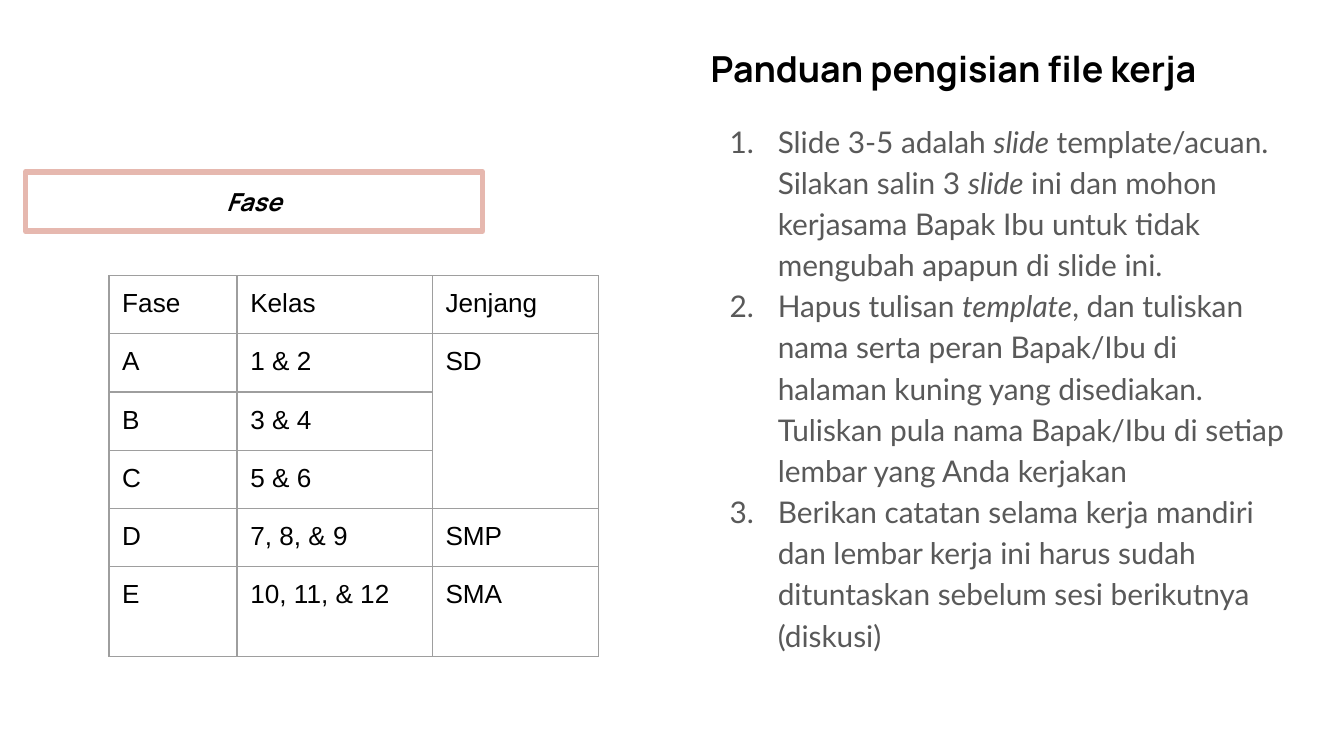
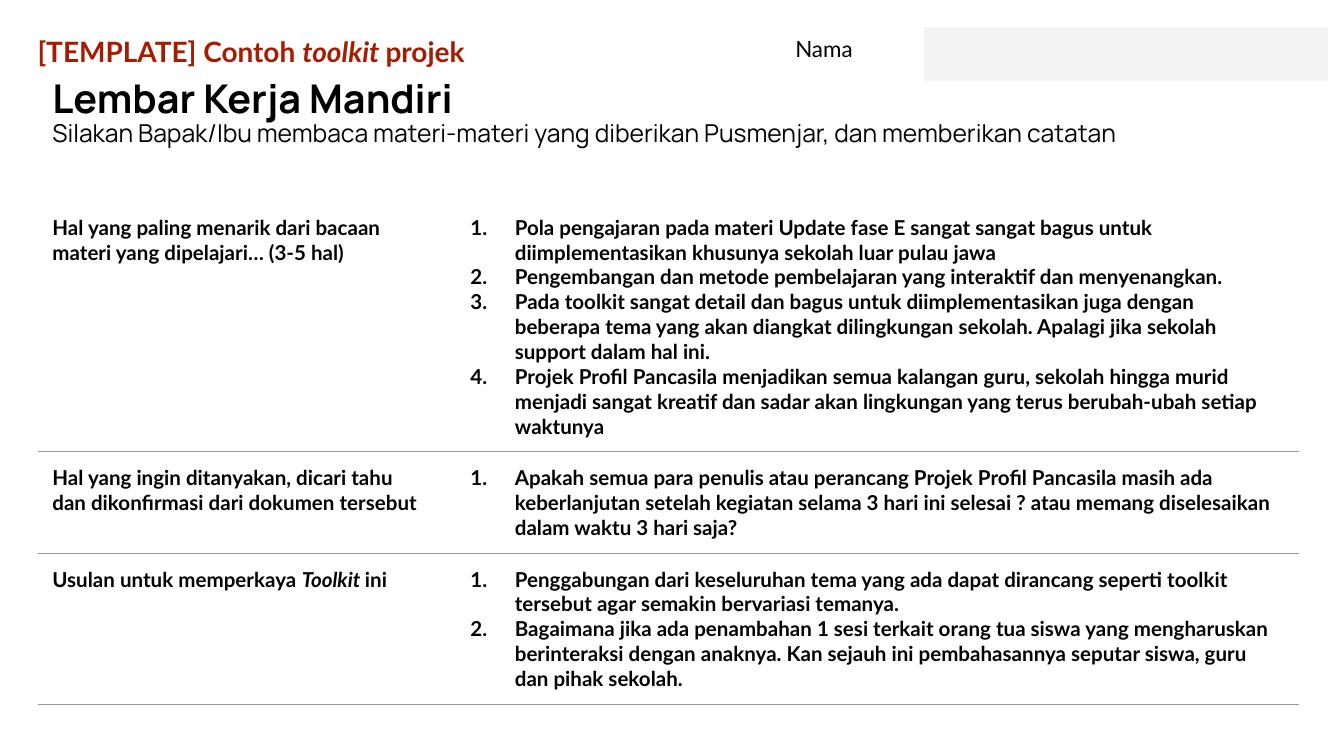
import pptx
import pptx.util
import pptx.dml.color
import pptx.enum.shapes
import pptx.enum.text
import pptx.oxml
import pptx.oxml.ns
from lxml import etree

Cm, Pt = pptx.util.Cm, pptx.util.Pt
RGBColor = pptx.dml.color.RGBColor
ALIGN = pptx.enum.text.PP_ALIGN
ANCHOR = pptx.enum.text.MSO_ANCHOR

# Shared look
BLACK = RGBColor(0x00, 0x00, 0x00)
WHITE = RGBColor(0xFF, 0xFF, 0xFF)
GRAY_TEXT = RGBColor(0x59, 0x59, 0x59)
GRID_LINE = RGBColor(0x9E, 0x9E, 0x9E)
RULE_LINE = RGBColor(0x99, 0x99, 0x99)
FIELD_FILL = RGBColor(0xF3, 0xF3, 0xF3)
PINK = RGBColor(0xE6, 0xB8, 0xAF)
RED = RGBColor(0xA6, 0x1C, 0x00)
HEAD_FONT, TEXT_FONT, GRID_FONT = "Manrope", "Lato", "Arial"
INSET = 0.25

# Content; text between asterisks is italic
GUIDE = [
    "Slide 3-5 adalah *slide* template/acuan. Silakan salin 3 *slide* ini dan mohon "
    "kerjasama Bapak Ibu untuk tidak mengubah apapun di slide ini.",
    "Hapus tulisan *template*, dan tuliskan nama serta peran Bapak/Ibu di halaman kuning "
    "yang disediakan. Tuliskan pula nama Bapak/Ibu di setiap lembar yang Anda kerjakan",
    "Berikan catatan selama kerja mandiri dan lembar kerja ini harus sudah dituntaskan "
    "sebelum sesi berikutnya (diskusi)",
]
PHASES = [
    ("Fase", "Kelas", "Jenjang"),
    ("A", "1 & 2", "SD"),
    ("B", "3 & 4", ""),
    ("C", "5 & 6", ""),
    ("D", "7, 8, & 9", "SMP"),
    ("E", "10, 11, & 12", "SMA"),
]
WORKSHEET = [
    ("Hal yang paling menarik dari bacaan materi yang dipelajari… (3-5 hal)", [
        "Pola pengajaran pada materi Update fase E sangat sangat bagus untuk "
        "diimplementasikan khusunya sekolah luar pulau jawa",
        "Pengembangan dan metode pembelajaran yang interaktif dan menyenangkan.",
        "Pada toolkit sangat detail dan bagus untuk diimplementasikan juga dengan beberapa "
        "tema yang akan diangkat dilingkungan sekolah. Apalagi jika sekolah support dalam "
        "hal ini.",
        "Projek Profil Pancasila menjadikan semua kalangan guru, sekolah hingga murid "
        "menjadi sangat kreatif dan sadar akan lingkungan yang terus berubah-ubah setiap "
        "waktunya",
    ]),
    ("Hal yang ingin ditanyakan, dicari tahu dan dikonfirmasi dari dokumen tersebut", [
        "Apakah semua para penulis atau perancang Projek Profil Pancasila masih ada "
        "keberlanjutan setelah kegiatan selama 3 hari ini selesai ? atau memang "
        "diselesaikan dalam waktu 3 hari saja?",
    ]),
    ("Usulan untuk memperkaya *Toolkit *ini", [
        "Penggabungan dari keseluruhan tema yang ada dapat dirancang seperti toolkit "
        "tersebut agar semakin bervariasi temanya.",
        "Bagaimana jika ada penambahan 1 sesi terkait orang tua siswa yang mengharuskan "
        "berinteraksi dengan anaknya. Kan sejauh ini pembahasannya seputar siswa, guru dan "
        "pihak sekolah.",
    ]),
]


def box(*lengths):
    return [Cm(length) for length in lengths]


def write(paragraph, text, size, font=TEXT_FONT, color=BLACK, bold=False, align=ALIGN.LEFT,
          spacing=1.0):
    """Fill a paragraph run by run, with italics between asterisks."""
    paragraph.alignment = align
    paragraph.line_spacing = spacing
    paragraph.space_before = paragraph.space_after = Pt(0)
    for i, part in enumerate(text.split("*")):
        if part:
            run = paragraph.add_run()
            run.text = part
            run.font.name, run.font.size = font, Pt(size)
            run.font.bold, run.font.italic = bold, i % 2 == 1
            run.font.color.rgb = color


def number(paragraph, hanging, color):
    """Give a paragraph an automatic number with a hanging indent."""
    props = paragraph._p.get_or_add_pPr()
    props.set("marL", str(Cm(1.27)))
    props.set("indent", str(-Cm(hanging)))
    props.append(solid_element("a:buClr", color))
    etree.SubElement(props, pptx.oxml.ns.qn("a:buFont"), typeface=TEXT_FONT)
    etree.SubElement(props, pptx.oxml.ns.qn("a:buAutoNum"), type="arabicPeriod")


def solid_element(tag, color):
    element = etree.Element(pptx.oxml.ns.qn(tag))
    etree.SubElement(element, pptx.oxml.ns.qn("a:srgbClr"), val=str(color))
    return element


def write_list(frame, items, size, hanging, color=BLACK, **style):
    for i, item in enumerate(items):
        paragraph = frame.add_paragraph() if i else frame.paragraphs[0]
        write(paragraph, item, size, color=color, **style)
        number(paragraph, hanging, color)


def set_frame(shape, anchor=ANCHOR.TOP):
    frame = shape.text_frame
    frame.word_wrap = True
    frame.auto_size = pptx.enum.text.MSO_AUTO_SIZE.NONE
    frame.vertical_anchor = anchor
    frame.margin_left = frame.margin_right = Cm(INSET)
    frame.margin_top = frame.margin_bottom = Cm(INSET)
    return frame


def place(placeholder, position, anchor=ANCHOR.TOP):
    """Move a template placeholder and return its text frame."""
    (placeholder.left, placeholder.top,
     placeholder.width, placeholder.height) = box(*position)
    return set_frame(placeholder, anchor)


def add_plain_table(slide, left, top, widths, heights):
    """Add a table without banding or fills."""
    table = slide.shapes.add_table(
        len(heights), len(widths), *box(left, top, sum(widths), sum(heights))).table
    table.first_row = table.horz_banding = False
    for column, width in zip(table.columns, widths):
        column.width = Cm(width)
    for row, height in zip(table.rows, heights):
        row.height = Cm(height)
    for cell in table.iter_cells():
        cell.fill.background()
        cell.margin_left = cell.margin_right = Cm(INSET)
        cell.margin_top = cell.margin_bottom = Cm(INSET)
    return table


def set_borders(cell, color, width, sides="LRTB"):
    props = cell._tc.get_or_add_tcPr()
    for i, side in enumerate(sides):
        line = etree.Element(pptx.oxml.ns.qn(f"a:ln{side}"), w=str(Pt(width)))
        line.append(solid_element("a:solidFill", color))
        props.insert(i, line)


def add_phase_label(slide):
    label = slide.shapes.add_shape(
        pptx.enum.shapes.MSO_SHAPE.RECTANGLE, *box(0.48, 3.25, 8.64, 1.12))
    label.shadow.inherit = False
    label.fill.solid()
    label.fill.fore_color.rgb = WHITE
    label.line.color.rgb = PINK
    label.line.width = Pt(3)
    write(set_frame(label, ANCHOR.MIDDLE).paragraphs[0], "*Fase*", 13.3, HEAD_FONT,
          bold=True, align=ALIGN.CENTER)


def add_phase_table(slide):
    table = add_plain_table(slide, 2.06, 5.21, [2.42, 3.69, 3.14], [1.1] * 5 + [1.7])
    for r, row in enumerate(PHASES):
        for c, text in enumerate(row):
            cell = table.cell(r, c)
            set_borders(cell, GRID_LINE, 0.75)
            write(cell.text_frame.paragraphs[0], text, 14, GRID_FONT)
    table.cell(1, 2).merge(table.cell(3, 2))


def add_worksheet(slide):
    table = add_plain_table(slide, 0.74, 3.81, [7.47, 16.33], [4.73, 1.92, 2.85])
    for r, (question, answers) in enumerate(WORKSHEET):
        asked, answered = table.cell(r, 0), table.cell(r, 1)
        write(asked.text_frame.paragraphs[0], question, 11, bold=True)
        write_list(answered.text_frame, answers, 11, 0.84, bold=True)
        for cell in (asked, answered):
            set_borders(cell, RULE_LINE, 0.75, "TB" if r else "B")


def add_name_field(slide):
    table = add_plain_table(slide, 14.78, 0.41, [2.59, 7.82], [1.22])
    caption, field = table.cell(0, 0), table.cell(0, 1)
    write(caption.text_frame.paragraphs[0], "Nama", 12)
    field.fill.solid()
    field.fill.fore_color.rgb = FIELD_FILL
    field.margin_top = field.margin_bottom = 0
    for cell in (caption, field):
        set_borders(cell, WHITE, 6)


def add_template_tag(slide):
    tag = slide.shapes.add_textbox(*box(0.46, 0.41, 13.18, 1.14))
    write(set_frame(tag).paragraphs[0], "[TEMPLATE] Contoh *toolkit *projek", 15,
          color=RED, bold=True)


def build_guide(deck):
    slide = deck.slides.add_slide(deck.slide_layouts[1])
    heading = place(slide.shapes.title, (13.18, 0.61, 11.58, 1.37), ANCHOR.MIDDLE)
    write(heading.paragraphs[0], "Panduan pengisian file kerja", 19.2, HEAD_FONT, bold=True)
    steps = place(slide.placeholders[1], (13.18, 1.98, 11.35, 11.43))
    write_list(steps, GUIDE, 16, 0.91, GRAY_TEXT, spacing=1.15)
    add_phase_label(slide)
    add_phase_table(slide)


def build_worksheet(deck):
    slide = deck.slides.add_slide(deck.slide_layouts[5])
    heading = place(slide.shapes.title, (0.74, 1.24, 23.8, 1.6))
    write(heading.paragraphs[0], "Lembar Kerja Mandiri", 21.2, HEAD_FONT, bold=True,
          spacing=0.9)
    write(heading.add_paragraph(),
          "Silakan Bapak/Ibu membaca materi-materi yang diberikan Pusmenjar, "
          "dan memberikan catatan", 13.2, HEAD_FONT, spacing=0.9)
    add_worksheet(slide)
    add_name_field(slide)
    add_template_tag(slide)


def main():
    deck = pptx.Presentation()
    deck.slide_width, deck.slide_height = box(25.4, 14.29)
    build_guide(deck)
    build_worksheet(deck)
    deck.save("out.pptx")


if __name__ == "__main__":
    main()
